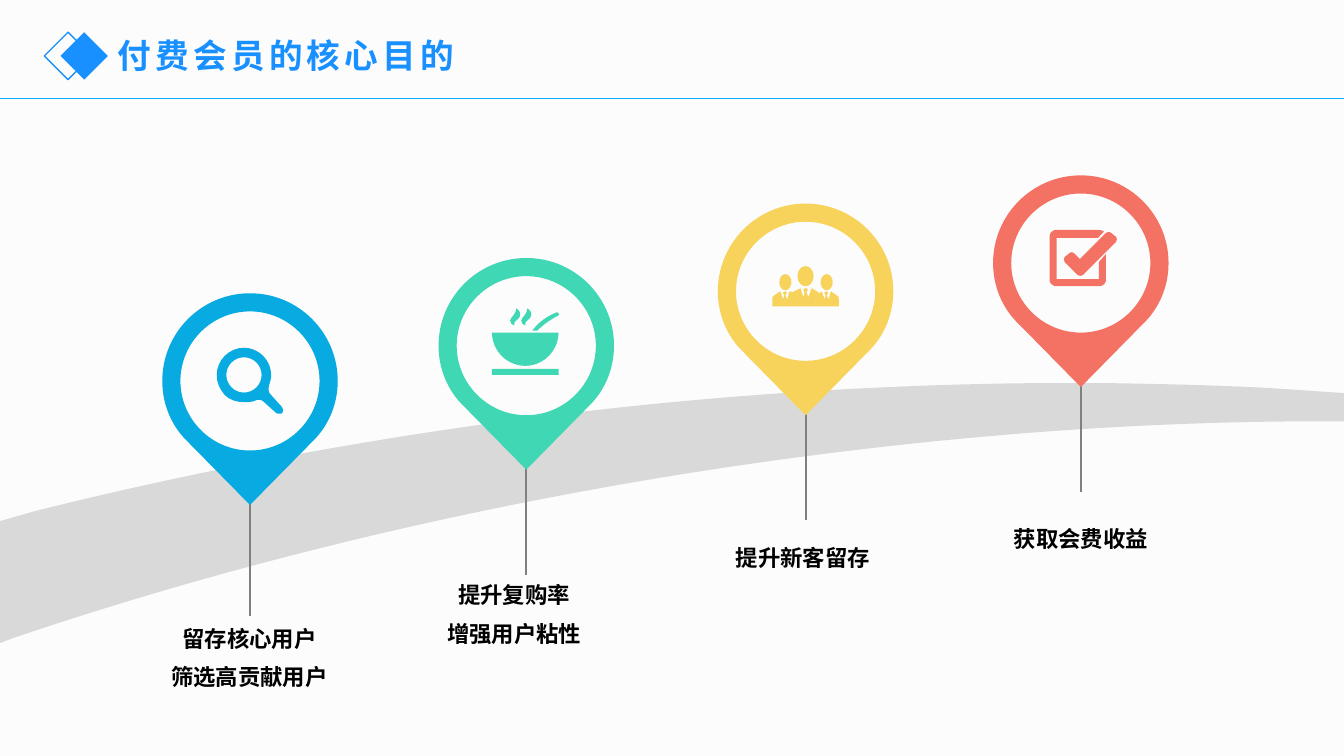
import pptx
import pptx.util
from lxml import etree
from pptx.dml.color import RGBColor
from pptx.enum.shapes import MSO_CONNECTOR, MSO_SHAPE
from pptx.enum.text import MSO_ANCHOR, PP_ALIGN
from pptx.oxml.ns import qn
from pptx.util import Inches

FONT = "Noto Sans CJK SC"
BACKGROUND = RGBColor(0xFC, 0xFC, 0xFC)
TITLE_BLUE = RGBColor(0x18, 0x90, 0xFF)
RULE_BLUE = RGBColor(0x00, 0xAD, 0xFF)
ROAD_GRAY = RGBColor(0xD9, 0xD9, 0xD9)
STEM_GRAY = RGBColor(0x80, 0x80, 0x80)
BLACK = RGBColor(0, 0, 0)
BLUE = RGBColor(0x07, 0xAA, 0xE1)
GREEN = RGBColor(0x3F, 0xD7, 0xB4)
YELLOW = RGBColor(0xF7, 0xD3, 0x5C)
RED = RGBColor(0xF3, 0x72, 0x64)


def ellipse(cx, cy, rx, ry):
    kx, ky = 0.55 * rx, 0.55 * ry
    left, right, top, bottom = cx - rx, cx + rx, cy - ry, cy + ry
    return [(cx, top), (cx + kx, top, right, cy - ky, right, cy),
            (right, cy + ky, cx + kx, bottom, cx, bottom),
            (cx - kx, bottom, left, cy + ky, left, cy),
            (left, cy - ky, cx - kx, top, cx, top)]


def place(contours, left, top, scale=1.0):
    """Scale contours and move their origin to left, top."""
    return [[tuple((left, top)[i % 2] + v * scale for i, v in enumerate(seg))
             for seg in contour] for contour in contours]


# In a contour the first pair starts, a pair is a line and a sextuple a cubic curve.
ROAD = [[
    (10.37, 3.8), (10.57, 3.8, 10.77, 3.8, 10.96, 3.8), (11.51, 3.81, 12.06, 3.82, 12.59, 3.85),
    (13.33, 3.9), (13.33, 4.18), (13.27, 4.18), (11.18, 4.17, 8.96, 4.35, 6.67, 4.72),
    (4.34, 5.1, 2.14, 5.65, 0.13, 6.33), (0, 6.38), (0, 5.17), (0.35, 5.07),
    (2.15, 4.62, 4.07, 4.27, 6.08, 4.05), (7.55, 3.89, 8.98, 3.81, 10.37, 3.8)]]

# The pin is in inches from its top centre.
PIN = [
    [(0, 0), (0.48, 0, 0.87, 0.39, 0.87, 0.87), (0.87, 1.1, 0.78, 1.32, 0.61, 1.48),
     (0, 2.1), (-0.61, 1.48), (-0.78, 1.32, -0.87, 1.1, -0.87, 0.87),
     (-0.87, 0.39, -0.48, 0, 0, 0)],
    ellipse(0, 0.87, 0.69, 0.69)]

# Icons are in hundredths of an inch from their top left corner.
MAGNIFIER = [
    [(63, 57), (54, 47), (51, 45, 51, 40, 52, 37), (53, 34, 54, 31, 54, 27),
     (54, 20, 51, 13, 46, 8), (41, 3, 34, 0, 27, 0), (20, 0, 13, 3, 8, 8),
     (3, 13, 0, 20, 0, 27), (0, 35, 3, 41, 8, 47), (13, 52, 20, 54, 27, 54),
     (30, 54, 34, 54, 37, 53), (40, 51, 45, 51, 47, 54), (57, 63),
     (59, 66, 63, 66, 65, 65), (66, 63, 66, 59, 63, 57)],
    ellipse(27, 27, 17.5, 17.5)]

STEAM = [(35, 0), (37, 1, 39, 3, 39, 5), (39, 9, 37, 11, 35, 12), (33, 13, 33, 15, 33, 17),
         (31, 17, 29, 14, 29, 12), (30, 8, 35, 6, 35, 0)]
BOWL = [
    [(0, 60), (66, 60), (66, 66), (0, 66)],
    [(0, 24), (66, 24), (66, 42, 51, 57, 33, 57), (15, 57, 0, 42, 0, 24)],
    [(65, 4), (67, 5, 67, 7, 66, 7), (58, 11, 51, 16, 45, 22), (40, 22),
     (46, 14, 54, 8, 64, 4)],
    STEAM,
    *place([STEAM], -11, 0)]

TEAM = [
    [(0, 40), (0, 33), (0, 31, 0, 30, 2, 29), (5, 27, 8, 25, 8, 25), (11, 33), (12, 29),
     (9, 26, 12, 25, 13, 25), (13, 25, 16, 26, 13, 29), (15, 33), (17, 25), (20, 26),
     (24, 24, 28, 22, 28, 22), (31, 31), (32, 26), (29, 22, 33, 22, 33, 22),
     (34, 22, 37, 22, 34, 26), (36, 31), (39, 22), (39, 22, 43, 24, 47, 27), (49, 25),
     (52, 33), (53, 29), (50, 26, 53, 25, 54, 25), (54, 25, 57, 26, 54, 29),
     (56, 33), (58, 25), (58, 25, 61, 27, 64, 29), (66, 30, 66, 31, 66, 33), (66, 40)],
    ellipse(13, 16, 6, 8), ellipse(54, 16, 6, 8), ellipse(33, 10, 8, 10)]

CHECKBOX = [
    [(59, 2), (60, 2, 60, 2, 61, 3), (66, 7), (67, 8, 67, 10, 66, 12), (33, 45),
     (32, 46, 29, 46, 28, 45), (15, 32), (14, 31, 14, 28, 15, 27), (20, 23),
     (21, 22, 23, 22, 24, 23), (30, 29), (56, 3), (57, 2, 58, 2, 59, 2)],
    [(7, 0), (49, 0), (51, 0, 53, 1, 54, 2), (48, 8), (7, 8), (7, 49), (49, 49),
     (49, 32), (56, 24), (56, 50), (56, 53, 53, 56, 49, 56), (7, 56),
     (3, 56, 0, 53, 0, 50), (0, 7), (0, 3, 3, 0, 7, 0)]]

# Pin centre, pin top, stem end, colour, icon and its corner, label and its box.
STEPS = [
    (2.48, 2.91, 6.11, BLUE, MAGNIFIER, (2.15, 3.45),
     ["留存核心用户", "筛选高贡献用户"], (1.42, 6.18, 2.11, 0.87)),
    (5.22, 2.56, 5.7, GREEN, BOWL, (4.88, 3.06),
     ["提升复购率", "增强用户粘性"], (4.15, 5.75, 1.9, 0.85)),
    (7.99, 2.02, 5.16, YELLOW, TEAM, (7.66, 2.64),
     ["提升新客留存"], (7, 5.38, 1.93, 0.48)),
    (10.72, 1.74, 4.88, RED, CHECKBOX, (10.41, 2.28),
     ["获取会费收益"], (9.77, 5.19, 1.9, 0.54)),
]


def add_outline(s, contours, color):
    """Draw closed contours, given in inches, as one filled shape."""
    builder = None
    for contour in contours:
        points = [(Inches(seg[i]), Inches(seg[i + 1]))
                  for seg in contour for i in range(0, len(seg), 2)]
        if builder is None:
            builder = s.shapes.build_freeform(*points[0], scale=1.0)
        else:
            builder.move_to(*points[0])
        builder.add_line_segments(points[1:], close=True)
    sp = builder.convert_to_shape()
    bend_lines(sp, [len(seg) == 6 for contour in contours for seg in contour[1:]])
    sp.shadow.inherit = False
    sp.fill.solid()
    sp.fill.fore_color.rgb = color
    sp.line.fill.background()


def bend_lines(sp, curved):
    """Join three lines into one cubic curve wherever a segment is curved."""
    lines = iter(list(sp._element.iter(qn("a:lnTo"))))
    for is_curve in curved:
        first = next(lines)
        if is_curve:
            first.tag = qn("a:cubicBezTo")
            for _ in range(2):
                line = next(lines)
                first.append(line[0])
                line.getparent().remove(line)


def add_line(s, x1, y1, x2, y2, color, width):
    line = s.shapes.add_connector(MSO_CONNECTOR.STRAIGHT, *map(Inches, (x1, y1, x2, y2)))
    line.line.color.rgb = color
    line.line.width = pptx.util.Pt(width)
    etree.SubElement(line._element.spPr, qn("a:effectLst"))


def add_diamond(s, x, filled):
    sp = s.shapes.add_shape(MSO_SHAPE.DIAMOND, *map(Inches, (x, 0.32, 0.47, 0.47)))
    sp.shadow.inherit = False
    if filled:
        sp.fill.solid()
        sp.fill.fore_color.rgb = TITLE_BLUE
        sp.line.fill.background()
    else:
        sp.fill.background()
        sp.line.color.rgb = TITLE_BLUE
        sp.line.width = pptx.util.Pt(1)


def write_text(tf, lines, size=16, color=BLACK, align=PP_ALIGN.CENTER,
               line_spacing=0.9, gap=10, tracking=0, anchor=MSO_ANCHOR.TOP):
    tf.word_wrap = True
    tf.vertical_anchor = anchor
    for i, line in enumerate(lines):
        p = tf.add_paragraph() if i else tf.paragraphs[0]
        p.alignment = align
        p.line_spacing = line_spacing
        p.space_before = pptx.util.Pt(gap if i else 0)
        r = p.add_run()
        r.text = line
        r.font.size = pptx.util.Pt(size)
        r.font.bold = True
        r.font.color.rgb = color
        r.font.name = FONT
        rPr = r._r.get_or_add_rPr()
        etree.SubElement(rPr, qn("a:ea")).set("typeface", FONT)
        if tracking:
            rPr.set("spc", str(tracking * 100))


def add_step(s, cx, top, stem_end, color, icon, corner, label, box):
    add_line(s, cx, stem_end - 1.48, cx, stem_end, STEM_GRAY, 1.5)
    add_outline(s, place(PIN, cx, top), color)
    add_outline(s, place(icon, *corner, scale=0.01), color)
    write_text(s.shapes.add_textbox(*map(Inches, box)).text_frame, label)


def add_heading(s, text):
    add_line(s, 0, 0.98, 13.33, 0.98, RULE_BLUE, 1)
    add_diamond(s, 0.44, filled=False)
    add_diamond(s, 0.6, filled=True)
    title = s.shapes.title
    title.left, title.top, title.width, title.height = map(Inches, (1.07, 0.3, 5.49, 0.5))
    write_text(title.text_frame, [text], size=24, color=TITLE_BLUE, align=PP_ALIGN.LEFT,
               line_spacing=1.0, tracking=3, anchor=MSO_ANCHOR.MIDDLE)


def main():
    prs = pptx.Presentation()
    prs.slide_width, prs.slide_height = Inches(13.33), Inches(7.5)
    s = prs.slides.add_slide(prs.slide_layouts[5])
    s.background.fill.solid()
    s.background.fill.fore_color.rgb = BACKGROUND
    add_heading(s, "付费会员的核心目的")
    add_outline(s, ROAD, ROAD_GRAY)
    for step in STEPS:
        add_step(s, *step)
    prs.save("out.pptx")


if __name__ == "__main__":
    main()
